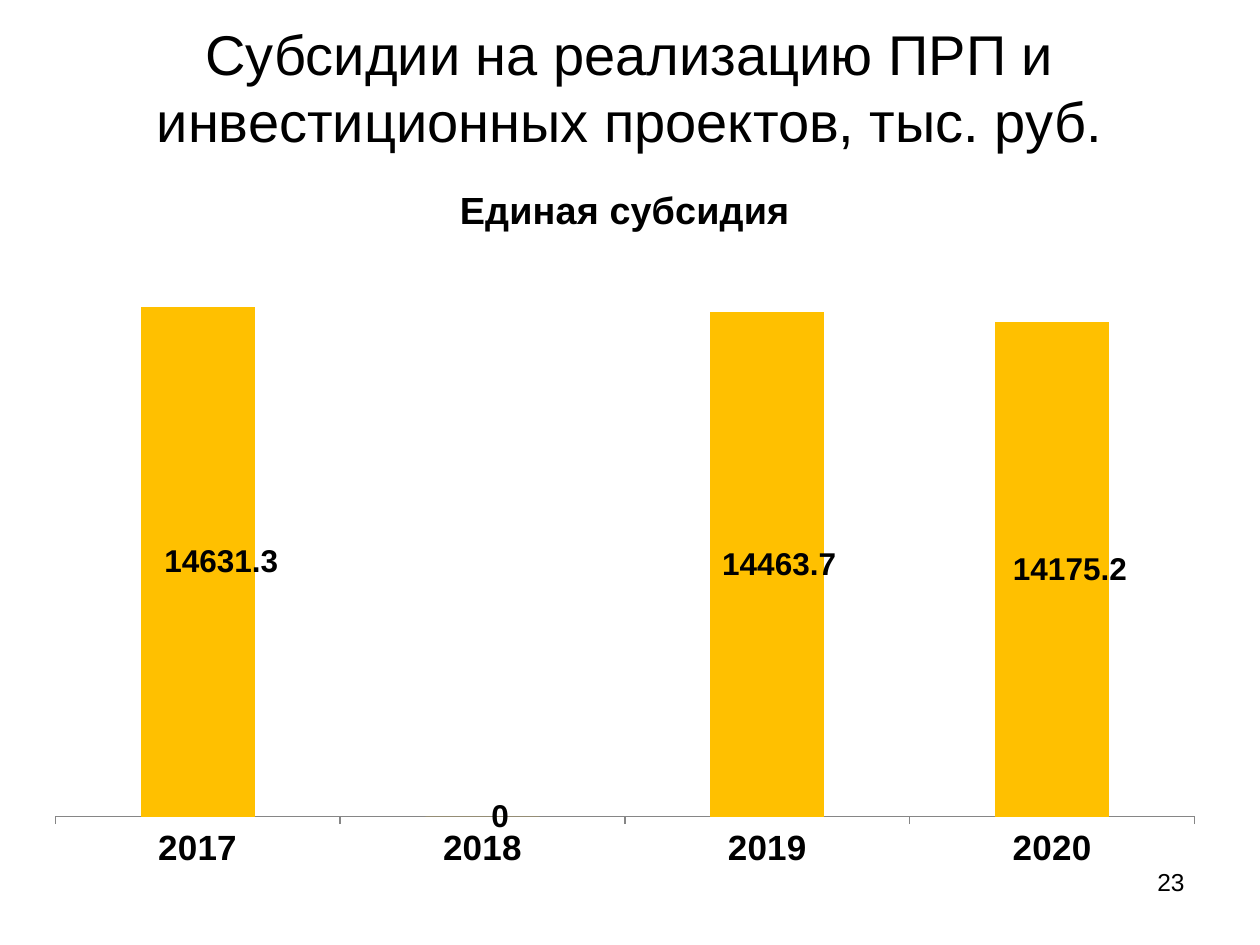
from dataclasses import dataclass

from lxml import etree
from pptx import Presentation
from pptx.chart.data import CategoryChartData
from pptx.dml.color import RGBColor
from pptx.enum.chart import XL_CHART_TYPE, XL_TICK_MARK
from pptx.enum.text import MSO_ANCHOR, PP_ALIGN
from pptx.oxml.ns import qn
from pptx.util import Inches, Pt

STACKED = XL_CHART_TYPE.COLUMN_STACKED
TICK_OUT = XL_TICK_MARK.OUTSIDE
TICK_NONE = XL_TICK_MARK.NONE
TOP, MIDDLE = MSO_ANCHOR.TOP, MSO_ANCHOR.MIDDLE
CENTER, RIGHT = PP_ALIGN.CENTER, PP_ALIGN.RIGHT


@dataclass(frozen=True)
class Theme:
    font: str = "Arial"
    ink: RGBColor = RGBColor(0, 0, 0)
    bar: RGBColor = RGBColor(0xFF, 0xC0, 0x00)
    axis: RGBColor = RGBColor(0x86, 0x86, 0x86)
    heading: float = 32
    chart_title: float = 21.6
    category: float = 20
    value: float = 18
    page: float = 14


@dataclass(frozen=True)
class Caption:
    text: str
    box: tuple[float, float, float, float]
    size: float
    align: PP_ALIGN
    anchor: MSO_ANCHOR


@dataclass(frozen=True)
class Subsidy:
    year: str
    amount: float
    label_shift: float  # share of the chart width


THEME = Theme()
CAPTIONS = [
    Caption("Субсидии на реализацию ПРП и инвестиционных проектов, тыс. руб.",
            (0.5, 0.3, 9, 0.78), THEME.heading, CENTER, MIDDLE),
    Caption("23", (7.17, 6.83, 2.33, 0.52), THEME.page, RIGHT, TOP),
]
SUBSIDY_NAME = "Единая субсидия"
SUBSIDIES = [
    Subsidy("2017", 14631.3, 0.02),
    Subsidy("2018", 0, 0.015),
    Subsidy("2019", 14463.7, 0.01),
    Subsidy("2020", 14175.2, 0.015),
]
CHART_BOX = (0.25, 1.25, 9.42, 5.75)
PLOT_LAYOUT = {"layoutTarget": "inner", "xMode": "edge", "yMode": "edge",
               "x": 0.02, "y": 0.14, "w": 0.96, "h": 0.77}


def style_font(font, size: float, bold: bool = False) -> None:
    font.name = THEME.font
    font.size = Pt(size)
    font.bold = bold
    font.color.rgb = THEME.ink


def add_caption(slide, caption: Caption) -> None:
    frame = slide.shapes.add_textbox(*map(Inches, caption.box)).text_frame
    frame.word_wrap = True
    frame.vertical_anchor = caption.anchor
    paragraph = frame.paragraphs[0]
    paragraph.text = caption.text
    paragraph.alignment = caption.align
    style_font(paragraph.font, caption.size)


def make_layout(settings: dict):
    layout = etree.Element(qn("c:layout"))
    manual = etree.SubElement(layout, qn("c:manualLayout"))
    for tag, value in settings.items():
        etree.SubElement(manual, qn(f"c:{tag}")).set("val", str(value))
    return layout


def place_plot(chart) -> None:
    plot_area = chart.element.find(f".//{qn('c:plotArea')}")
    for old_layout in plot_area.findall(qn("c:layout")):
        plot_area.remove(old_layout)
    plot_area.insert(0, make_layout(PLOT_LAYOUT))


def add_subsidy_chart(slide, subsidies: list[Subsidy]) -> None:
    data = CategoryChartData()
    data.categories = [s.year for s in subsidies]
    data.add_series(SUBSIDY_NAME, [s.amount for s in subsidies])
    chart = slide.shapes.add_chart(STACKED, *map(Inches, CHART_BOX), data).chart
    style_font(chart.font, THEME.value)
    chart.has_legend = False
    place_plot(chart)

    # Chart title
    chart.has_title = True
    title = chart.chart_title.text_frame.paragraphs[0]
    title.text = SUBSIDY_NAME
    style_font(title.font, THEME.chart_title, bold=True)

    # Axes
    years = chart.category_axis
    years.major_tick_mark = TICK_OUT
    years.minor_tick_mark = TICK_NONE
    years.format.line.color.rgb = THEME.axis
    style_font(years.tick_labels.font, THEME.category, bold=True)
    amounts = chart.value_axis
    amounts.visible = False
    amounts.has_major_gridlines = False
    amounts.minimum_scale, amounts.maximum_scale = 0, 16000

    # Columns and their shifted labels
    plot = chart.plots[0]
    plot.gap_width, plot.overlap = 150, 100
    plot.vary_by_categories = False
    columns = plot.series[0]
    columns.format.fill.solid()
    columns.format.fill.fore_color.rgb = THEME.bar
    columns.data_labels.show_value = True
    style_font(columns.data_labels.font, THEME.value, bold=True)
    for index, subsidy in enumerate(subsidies):
        style_font(columns.points[index].data_label.font, THEME.value, bold=True)
    for label, subsidy in zip(chart.element.iter(qn("c:dLbl")), subsidies):
        label.insert(1, make_layout({"x": subsidy.label_shift, "y": 0}))


def main() -> None:
    deck = Presentation()
    deck.slide_width, deck.slide_height = Inches(10), Inches(7.5)
    slide = deck.slides.add_slide(deck.slide_layouts[6])
    add_subsidy_chart(slide, SUBSIDIES)
    for caption in CAPTIONS:
        add_caption(slide, caption)
    deck.save("out.pptx")


if __name__ == "__main__":
    main()
